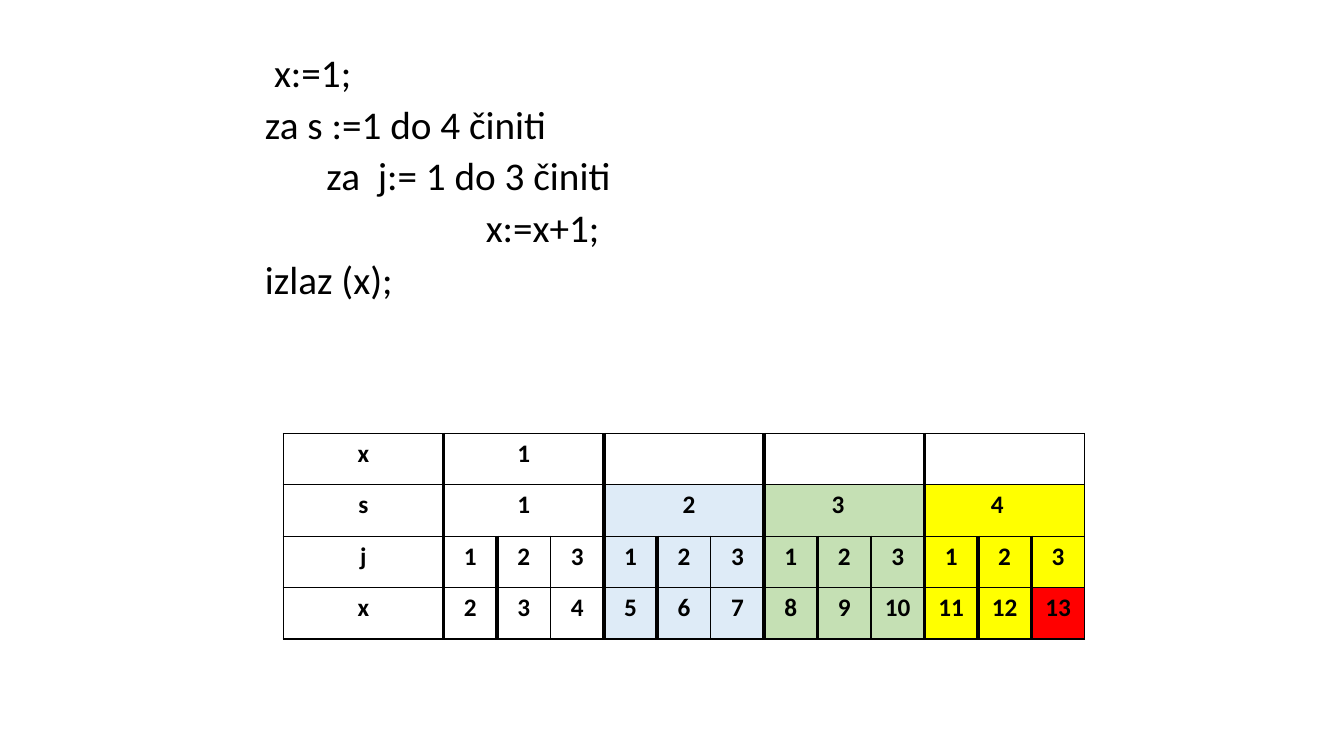
from dataclasses import dataclass
from typing import Optional

from lxml.etree import SubElement
from pptx import Presentation
from pptx.dml.color import RGBColor
from pptx.enum.text import PP_ALIGN
from pptx.oxml.ns import qn
from pptx.util import Inches, Pt


@dataclass(frozen=True)
class Theme:
    font: str = "Calibri"
    ink: str = "000000"
    blue: str = "DEEBF7"
    green: str = "C5E0B4"
    yellow: str = "FFFF00"
    red: str = "FF0000"
    code_size: int = 28
    table_size: int = 18
    thin: int = 1
    medium: int = 2
    thick: int = 3


@dataclass(frozen=True)
class CodeLine:
    text: str
    indent: float


@dataclass(frozen=True)
class LoopPass:
    """One pass of the outer loop: a block of three table columns."""
    start: str
    outer: str
    fill: Optional[str] = None
    outer_indent: Optional[float] = None


THEME = Theme()
WIDTH, HEIGHT = 13.33, 7.5
COLUMN, ROW = 0.53, 0.51
INNER_STEPS = 3
LABELS = ("x", "s", "j", "x")
CODE = (
    CodeLine("x:=1;", 0.44),
    CodeLine("za s :=1 do 4 činiti", 0.35),
    CodeLine("za  j:= 1 do 3 činiti", 0.96),
    CodeLine("x:=x+1;", 2.54),
    CodeLine("izlaz (x);", 0.35),
)
PASSES = (
    LoopPass("1", "1"),
    LoopPass("", "2", THEME.blue, 0.68),
    LoopPass("", "3", THEME.green, 0.57),
    LoopPass("", "4", THEME.yellow, 0.56),
)
COLUMNS = 1 + INNER_STEPS * len(PASSES)


def write(paragraph, text: str, *, size: int, bold: bool = False,
          align=PP_ALIGN.LEFT, indent: float = 0) -> None:
    paragraph.alignment = align
    if indent:
        properties = paragraph._p.get_or_add_pPr()
        properties.set("marL", str(Inches(indent)))
        properties.set("indent", "0")
    font = paragraph.add_run().font if text else paragraph.font
    if text:
        paragraph.runs[0].text = text
    font.name, font.size, font.bold = THEME.font, Pt(size), bold
    font.color.rgb = RGBColor.from_string(THEME.ink)


def edge_width(edge: int, row: int) -> int:
    """Width of the vertical rule at the left of the given column."""
    if edge in (0, COLUMNS):
        return THEME.thin
    step = (edge - 1) % INNER_STEPS
    if step == 0 or (step == 1 and row >= 2):
        return THEME.thick
    return THEME.medium if edge == COLUMNS - 1 else THEME.thin


def set_borders(cell, left: int, right: int) -> None:
    properties = cell._tc.get_or_add_tcPr()
    widths = {"a:lnL": left, "a:lnR": right, "a:lnT": THEME.thin, "a:lnB": THEME.thin}
    for tag, width in widths.items():
        line = SubElement(properties, qn(tag), w=str(Pt(width)))
        fill = SubElement(line, qn("a:solidFill"))
        SubElement(fill, qn("a:srgbClr"), val=THEME.ink)


def fill_cell(table, row: int, column: int, text: str, *, span: int = 1,
              fill: Optional[str] = None, indent: Optional[float] = None) -> None:
    cell = table.cell(row, column)
    if span > 1:
        cell.merge(table.cell(row, column + span - 1))
    for covered in range(column, column + span):
        set_borders(table.cell(row, covered), edge_width(column, row),
                    edge_width(column + span, row))
    if fill:
        cell.fill.solid()
        cell.fill.fore_color.rgb = RGBColor.from_string(fill)
    else:
        cell.fill.background()
    write(cell.text_frame.paragraphs[0], text, size=THEME.table_size, bold=True,
          align=PP_ALIGN.CENTER if indent is None else PP_ALIGN.LEFT,
          indent=indent or 0)


def add_code(slide) -> None:
    box = slide.shapes.add_textbox(Inches(2.18), Inches(0.52), Inches(9), Inches(3.2))
    frame = box.text_frame
    frame.word_wrap = True
    for index, line in enumerate(CODE):
        paragraph = frame.add_paragraph() if index else frame.paragraphs[0]
        paragraph.line_spacing = 0.8
        paragraph.space_before = Pt(10)
        write(paragraph, line.text, size=THEME.code_size, indent=line.indent)


def add_trace_table(slide) -> None:
    table = slide.shapes.add_table(
        len(LABELS), COLUMNS, Inches(2.81), Inches(4.3),
        Inches(COLUMN * (COLUMNS + 2)), Inches(ROW * len(LABELS))).table
    table.first_row = table.horz_banding = False
    for index, column in enumerate(table.columns):
        column.width = Inches(COLUMN if index else COLUMN * 3)
    for row, label in enumerate(LABELS):
        table.rows[row].height = Inches(ROW)
        fill_cell(table, row, 0, label)
    for index, loop in enumerate(PASSES):
        first = 1 + index * INNER_STEPS
        fill_cell(table, 0, first, loop.start, span=INNER_STEPS)
        fill_cell(table, 1, first, loop.outer, span=INNER_STEPS,
                  fill=loop.fill, indent=loop.outer_indent)
        for step in range(INNER_STEPS):
            column = first + step
            result_fill = THEME.red if column == COLUMNS - 1 else loop.fill
            fill_cell(table, 2, column, str(step + 1), fill=loop.fill)
            fill_cell(table, 3, column, str(column + 1), fill=result_fill)


def main() -> None:
    presentation = Presentation()
    presentation.slide_width = Inches(WIDTH)
    presentation.slide_height = Inches(HEIGHT)
    slide = presentation.slides.add_slide(presentation.slide_layouts[6])
    add_code(slide)
    add_trace_table(slide)
    presentation.save("out.pptx")


if __name__ == "__main__":
    main()
